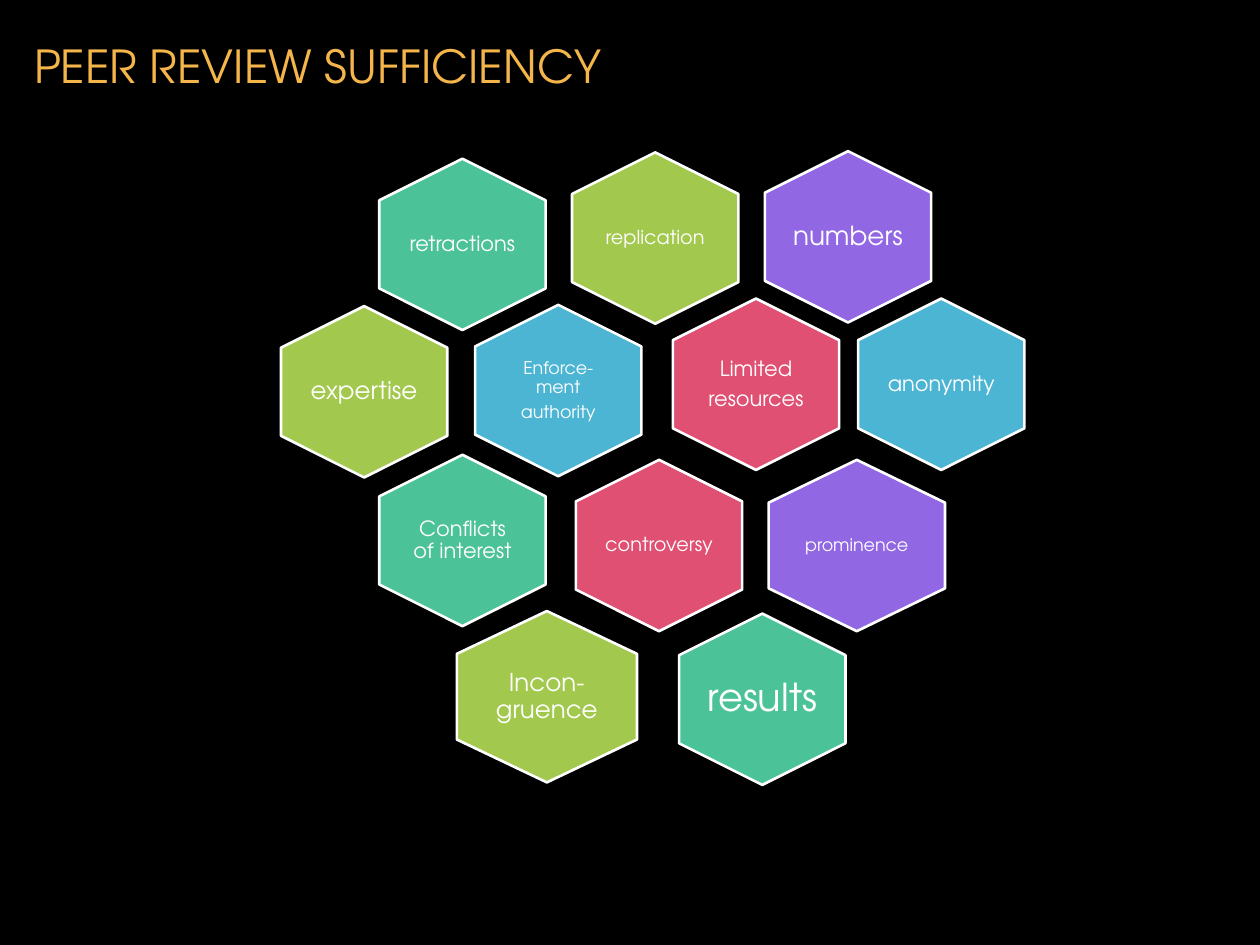
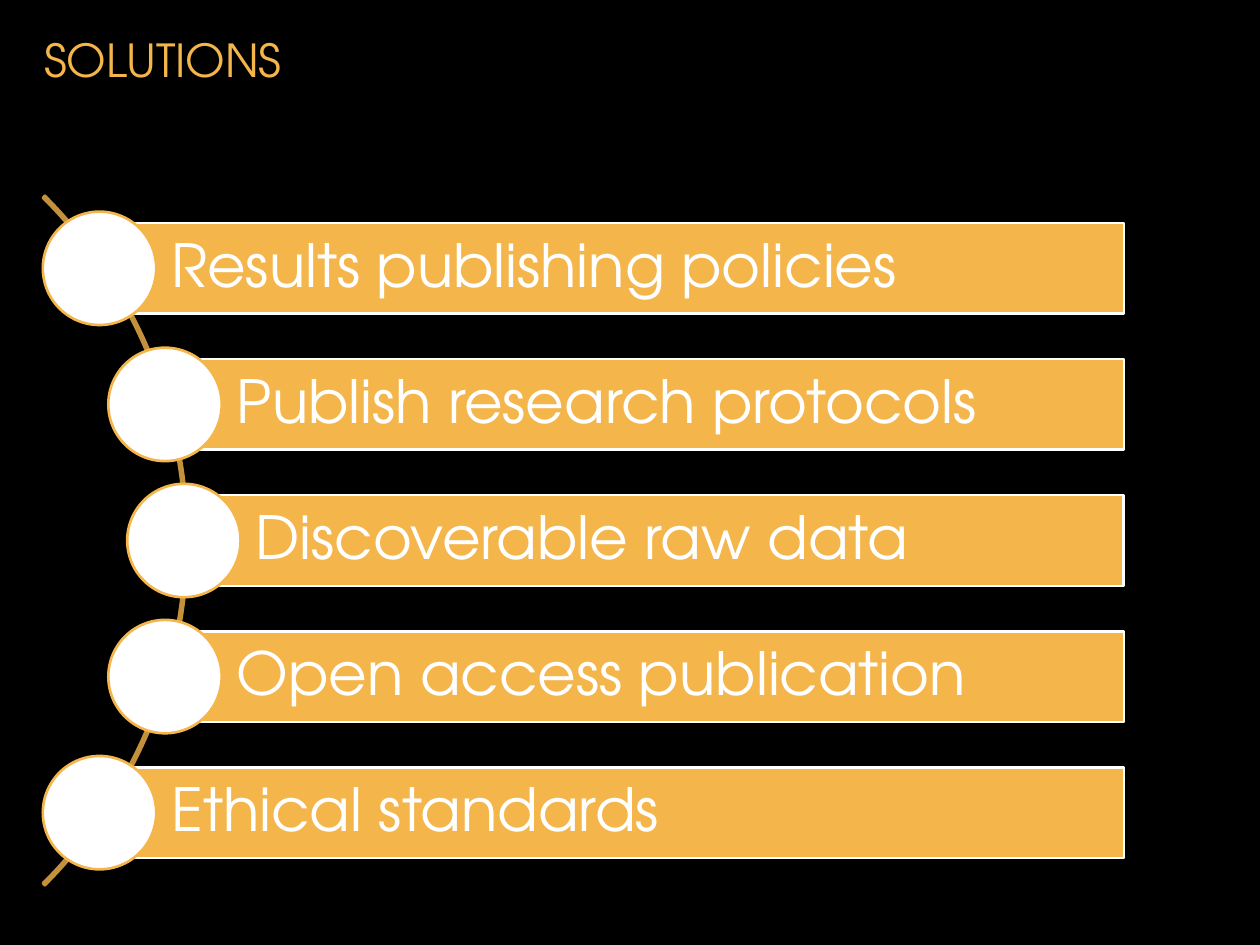
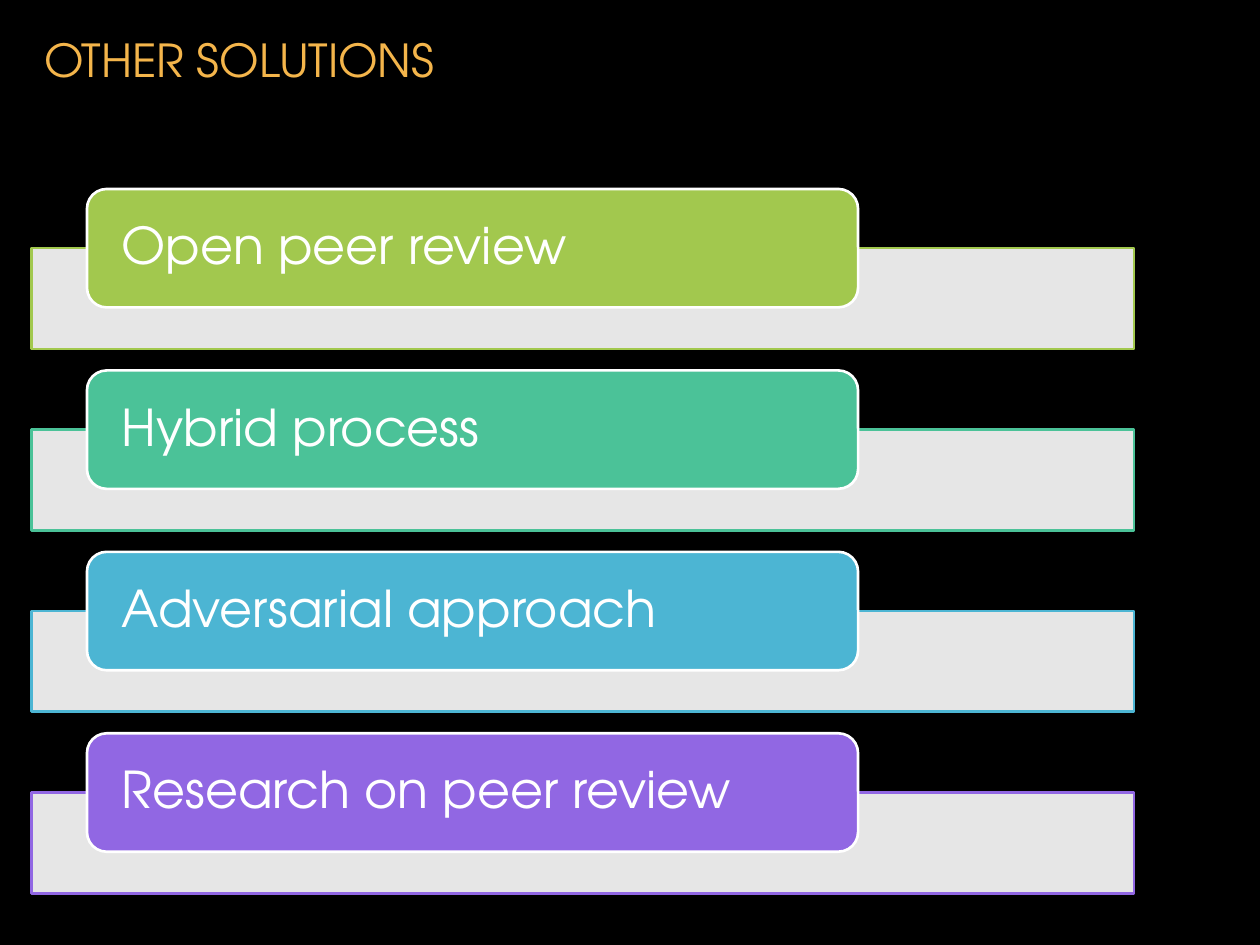
from lxml import etree
from pptx import Presentation
from pptx.dml.color import RGBColor
from pptx.enum.shapes import MSO_SHAPE
from pptx.enum.text import MSO_ANCHOR, MSO_AUTO_SIZE, PP_ALIGN
from pptx.oxml.ns import qn
from pptx.util import Inches, Pt

HEXAGON = MSO_SHAPE.HEXAGON
BLOCK_ARC = MSO_SHAPE.BLOCK_ARC
RECTANGLE = MSO_SHAPE.RECTANGLE
ROUNDED = MSO_SHAPE.ROUNDED_RECTANGLE
OVAL = MSO_SHAPE.OVAL
MIDDLE = MSO_ANCHOR.MIDDLE
NO_FIT = MSO_AUTO_SIZE.NONE
LEFT = PP_ALIGN.LEFT
CENTER = PP_ALIGN.CENTER

FONT = "TeX Gyre Adventor"
COLORS = {
    "black": "000000",
    "white": "FFFFFF",
    "amber": "F4B54B",
    "bronze": "C3913C",
    "lime": "A2C84E",
    "teal": "4BC298",
    "blue": "4CB5D3",
    "violet": "9167E3",
    "rose": "E05073",
}
TITLE_ONLY = 5
OUTLINE = 1.5

HEX_HEIGHT = 1.36
HEX_WIDTH = 1.32
LABEL_WIDTH = 0.89
LABEL_HEIGHT = 0.91
CONCERNS = [
    (5.2, 1.89, HEX_WIDTH, "lime", 11, 0.05, ["replication"]),
    (3.67, 1.94, HEX_WIDTH, "teal", 12, 0, ["retractions"]),
    (4.43, 3.1, HEX_WIDTH, "blue", 10, 0.04, ["Enforce-ment", "authority"]),
    (6.73, 1.88, HEX_WIDTH, "violet", 15, 0, ["numbers"]),
    (6, 3.05, HEX_WIDTH, "rose", 12, 0.05, ["Limited", "resources"]),
    (2.89, 3.11, HEX_WIDTH, "lime", 14, 0, ["expertise"]),
    (3.67, 4.29, HEX_WIDTH, "teal", 12, 0.05, ["Conflicts of interest"]),
    (7.47, 3.05, HEX_WIDTH, "blue", 12, 0, ["anonymity"]),
    (6.8, 4.33, 1.4, "violet", 10, 0.04, ["prominence"]),
    (5.23, 4.33, HEX_WIDTH, "rose", 11, 0, ["controversy"]),
    (4.34, 5.53, 1.43, "lime", 14, 0.06, ["Incon-gruence"]),
    (6.05, 5.55, HEX_WIDTH, "teal", 22, 0, ["results"]),
]

BAR_TOP, BAR_STEP, BAR_HEIGHT, BAR_RIGHT = 1.77, 1.08, 0.72, 8.92
KNOB = 0.9
SOLUTIONS = [
    (0.79, "Results publishing policies"),
    (1.31, "Publish research protocols"),
    (1.46, "Discoverable raw data"),
    (1.31, "Open access publication"),
    (0.79, "Ethical standards"),
]

TAB_TOP, TAB_STEP, STRIP_DROP = 1.5, 1.44, 0.47
OTHER_SOLUTIONS = [
    ("lime", "Open peer review"),
    ("teal", "Hybrid process"),
    ("blue", "Adversarial approach"),
    ("violet", "Research on peer review"),
]


def rgb(color):
    return RGBColor.from_string(COLORS[color])


def apply(target, formats):
    for attribute, value in formats.items():
        setattr(target, attribute, value)


def write(frame, lines, size, color, margins, align=LEFT, leading=0.9, after=0.35):
    left, top, right, bottom = (Inches(margin) for margin in margins)
    apply(frame, {
        "word_wrap": True, "auto_size": NO_FIT, "vertical_anchor": MIDDLE,
        "margin_left": left, "margin_top": top,
        "margin_right": right, "margin_bottom": bottom,
    })
    frame.text = "\n".join(lines)
    for paragraph in frame.paragraphs:
        apply(paragraph, {
            "alignment": align, "line_spacing": leading,
            "space_before": Pt(0), "space_after": Pt(size * after),
        })
        for run in paragraph.runs:
            apply(run.font, {"name": FONT, "size": Pt(size), "bold": False})
            run.font.color.rgb = rgb(color)


def add_titled_slide(prs, title, left, top, width, height):
    slide = prs.slides.add_slide(prs.slide_layouts[TITLE_ONLY])
    heading = slide.shapes.title
    apply(heading, {
        "left": Inches(left), "top": Inches(top),
        "width": Inches(width), "height": Inches(height),
    })
    write(heading.text_frame, [title], 26, "amber", (0.1, 0.05, 0.1, 0.05),
          leading=1, after=0)
    return slide


def add_figure(slide, preset, box, fill, line):
    figure = slide.shapes.add_shape(preset, *map(Inches, box))
    figure.shadow.inherit = False
    if fill:
        figure.fill.solid()
        figure.fill.fore_color.rgb = rgb(fill)
    else:
        figure.fill.background()
    figure.line.color.rgb = rgb(line)
    figure.line.width = Pt(OUTLINE)
    return figure


def set_opacity(figure, percent):
    color = figure.fill._xPr.find(qn("a:solidFill"))[0]
    etree.SubElement(color, qn("a:alpha"), val=str(percent * 1000))


def add_concern(slide, x, y, width, color, size, margin, lines):
    hexagon = add_figure(
        slide, HEXAGON,
        (x - HEX_HEIGHT / 2, y - width / 2, HEX_HEIGHT, width), color, "white")
    hexagon.rotation = 90
    label_width = LABEL_WIDTH + (width - HEX_WIDTH) / 2
    label = slide.shapes.add_textbox(
        Inches(x - label_width / 2), Inches(y - LABEL_HEIGHT / 2),
        Inches(label_width), Inches(LABEL_HEIGHT))
    write(label.text_frame, lines, size, "white", [margin] * 4, CENTER)


def add_solution(slide, left, top, text):
    bar = add_figure(slide, RECTANGLE, (left, top, BAR_RIGHT - left, BAR_HEIGHT),
                     "amber", "white")
    write(bar.text_frame, [text], 34, "white", (0.57, 0.09, 0.09, 0.09))
    knob_top = top + (BAR_HEIGHT - KNOB) / 2
    add_figure(slide, OVAL, (left - KNOB / 2, knob_top, KNOB, KNOB),
               "white", "amber")


def add_other_solution(slide, top, color, text):
    strip = add_figure(slide, RECTANGLE, (0.25, top + STRIP_DROP, 8.75, 0.8),
                       "white", color)
    set_opacity(strip, 90)
    tab = add_figure(slide, ROUNDED, (0.69, top, 6.12, 0.94), color, "white")
    write(tab.text_frame, [text], 29, "white", (0.23, 0, 0.23, 0))


def build_sufficiency(prs):
    slide = add_titled_slide(prs, "PEER REVIEW SUFFICIENCY", 0.17, -0.11, 9, 1.25)
    for concern in CONCERNS:
        add_concern(slide, *concern)


def build_solutions(prs):
    slide = add_titled_slide(prs, "SOLUTIONS", 0.25, -0.25, 8.21, 1.44)
    arc = add_figure(slide, BLOCK_ARC, (-6.25, 0.42, 7.74, 7.74), None, "bronze")
    for index, value in enumerate((189, 27, 0.003)):
        arc.adjustments[index] = value
    for row, (left, text) in enumerate(SOLUTIONS):
        add_solution(slide, left, BAR_TOP + row * BAR_STEP, text)


def build_other_solutions(prs):
    slide = add_titled_slide(prs, "OTHER SOLUTIONS", 0.25, -0.25, 8.21, 1.44)
    for row, (color, text) in enumerate(OTHER_SOLUTIONS):
        add_other_solution(slide, TAB_TOP + row * TAB_STEP, color, text)


def main():
    prs = Presentation()
    prs.slide_width = Inches(10)
    prs.slide_height = Inches(7.5)
    backdrop = prs.slide_master.background.fill
    backdrop.solid()
    backdrop.fore_color.rgb = rgb("black")
    build_sufficiency(prs)
    build_solutions(prs)
    build_other_solutions(prs)
    prs.save("out.pptx")


if __name__ == "__main__":
    main()
